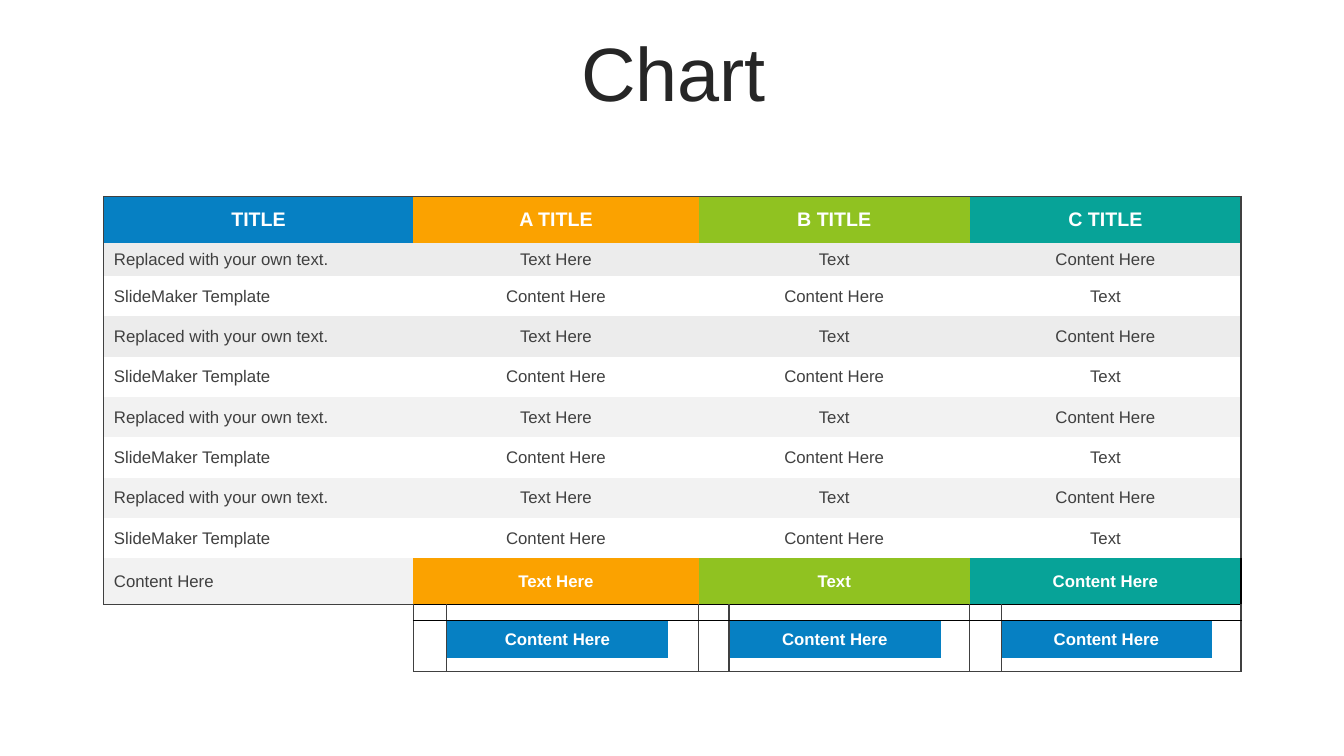
from dataclasses import dataclass

from lxml import etree
from pptx import Presentation
from pptx import util as u
from pptx.dml.color import RGBColor
from pptx.enum import text
from pptx.oxml.ns import qn


@dataclass(frozen=True)
class Theme:
    font: str = "Arial"
    title_size: float = 54
    header_size: float = 14
    body_size: float = 12
    gap_size: float = 1
    title: str = "262626"
    ink: str = "404040"
    rule: str = "000000"
    white: str = "FFFFFF"
    blue: str = "0680C3"
    groups: tuple = ("FBA200", "90C221", "07A398")
    upper_band: str = "ECECEC"
    lower_band: str = "F2F2F2"
    plain_table: str = "{2D5ABB26-0587-4C30-8999-92F81FD0307C}"


HEADER = ("TITLE", "A TITLE", "B TITLE", "C TITLE")
ODD_ROW = ("Replaced with your own text.", "Text Here", "Text", "Content Here")
EVEN_ROW = ("SlideMaker Template", "Content Here", "Content Here", "Text")
SUMMARY = ("Content Here",) + ODD_ROW[1:]
BUTTON = "Content Here"
ROWS = [HEADER] + [ODD_ROW, EVEN_ROW] * 4 + [SUMMARY]
LAST = len(ROWS) - 1
FOOT, BUTTON_ROW, BOTTOM = LAST + 1, LAST + 2, LAST + 3
COLUMN_WIDTHS = (3.07, 0.33, 2.2, 0.3, 0.3, 2.1, 0.29, 0.31, 2.09, 0.29)
ROW_HEIGHTS = (0.46, 0.33) + (0.4,) * 7 + (0.46, 0.16, 0.37, 0.13)


class ChartSlide:
    def __init__(self, presentation, theme):
        self.theme = theme
        self.slide = presentation.slides.add_slide(presentation.slide_layouts[5])

    def add_words(self, frame, words, size, color, bold=False, centred=True):
        paragraph = frame.paragraphs[0]
        paragraph.alignment = text.PP_ALIGN.CENTER if centred else text.PP_ALIGN.LEFT
        run = paragraph.add_run()
        run.text = words
        style = {"name": self.theme.font, "size": u.Pt(size), "bold": bold}
        for name, value in style.items():
            setattr(run.font, name, value)
        run.font.color.rgb = RGBColor.from_string(color)
        return paragraph

    def title(self, words, left, top, width, height):
        heading = self.slide.shapes.title
        box = {"left": left, "top": top, "width": width, "height": height}
        for name, value in box.items():
            setattr(heading, name, u.Inches(value))
        heading.text_frame.vertical_anchor = text.MSO_ANCHOR.MIDDLE
        paragraph = self.add_words(
            heading.text_frame, words, self.theme.title_size, self.theme.title)
        paragraph.line_spacing = 0.9

    def table(self, left, top):
        frame = self.slide.shapes.add_table(
            len(ROW_HEIGHTS), len(COLUMN_WIDTHS), u.Inches(left), u.Inches(top),
            u.Inches(sum(COLUMN_WIDTHS)), u.Inches(sum(ROW_HEIGHTS)))
        grid = frame.table
        grid.first_row = grid.horz_banding = False
        grid._tbl.tblPr.find(qn("a:tableStyleId")).text = self.theme.plain_table
        for column, width in zip(grid.columns, COLUMN_WIDTHS):
            column.width = u.Inches(width)
        for row, height in zip(grid.rows, ROW_HEIGHTS):
            row.height = u.Inches(height)
        return grid

    def cell(self, cell, fill=None, words="", **style):
        cell.vertical_anchor = text.MSO_ANCHOR.MIDDLE
        if fill:
            cell.fill.solid()
            cell.fill.fore_color.rgb = RGBColor.from_string(fill)
        if words:
            self.add_words(cell.text_frame, words, **style)

    def shrink(self, cell):
        """Keep an empty cell from stretching its row."""
        cell.margin_top = cell.margin_bottom = 0
        paragraph = cell.text_frame.paragraphs[0]._p
        etree.SubElement(paragraph, qn("a:endParaRPr"), sz=str(self.theme.gap_size * 100))

    def borders(self, cell, sides):
        """Draw the given sides, a dict of L, R, T, B to colour."""
        properties = cell._tc.get_or_add_tcPr()
        drawn = [side for side in "LRTB" if side in sides]
        for place, side in enumerate(drawn):
            line = etree.Element(qn(f"a:ln{side}"), w=str(u.Pt(1)))
            solid = etree.SubElement(line, qn("a:solidFill"))
            etree.SubElement(solid, qn("a:srgbClr"), val=sides[side])
            properties.insert(place, line)


def row_style(theme, row, group):
    """Fill and text style of one cell in the upper rows; group 0 is the label column."""
    accent = (theme.blue,) + theme.groups
    style = {"size": theme.body_size, "color": theme.ink, "centred": group > 0}
    if row == 0:
        return accent[group], {"size": theme.header_size, "color": theme.white, "bold": True}
    if row == LAST and group:
        return accent[group], {"size": theme.body_size, "color": theme.white, "bold": True}
    if row % 2 == 0:
        return None, style
    return theme.upper_band if row < 5 else theme.lower_band, style


def sides_of(theme, row, column):
    """Outline of the upper block, and of each button box below it."""
    label, step = column == 0, (column - 1) % 3
    if row <= LAST:
        edges = {
            "L": label,
            "R": column == len(COLUMN_WIDTHS) - 1,
            "T": row == 0,
            "B": row == LAST,
        }
    else:
        edges = {
            "L": not label and step == 0,
            "R": label or step == 2,
            "T": row == FOOT,
            "B": not label and row == BOTTOM,
        }
    sides = {side: theme.ink for side, shown in edges.items() if shown}
    if not label:
        black = {LAST: "RB", FOOT: "T"}.get(row, "")
        sides.update({side: theme.rule for side in black if side in sides})
    return sides


def main():
    presentation = Presentation()
    presentation.slide_width = u.Inches(13.33)
    presentation.slide_height = u.Inches(7.5)
    theme = Theme()
    page = ChartSlide(presentation, theme)
    page.title("Chart", 0.35, 0.37, 12.66, 0.79)
    grid = page.table(1.03, 1.95)

    for row, entries in enumerate(ROWS):
        for group, words in enumerate(entries):
            first = max(0, 3 * group - 2)
            if group:
                grid.cell(row, first).merge(grid.cell(row, first + 2))
            fill, style = row_style(theme, row, group)
            page.cell(grid.cell(row, first), fill, words, **style)

    grid.cell(FOOT, 0).merge(grid.cell(BOTTOM, 0))
    button_style = {"size": theme.body_size, "color": theme.white, "bold": True}
    for row in range(FOOT, BOTTOM + 1):
        for column in range(1, len(COLUMN_WIDTHS)):
            if row == BUTTON_ROW and column % 3 == 2:
                page.cell(grid.cell(row, column), theme.blue, BUTTON, **button_style)
            else:
                page.cell(grid.cell(row, column), theme.white)

    for row in range(len(ROW_HEIGHTS)):
        for column in range(len(COLUMN_WIDTHS)):
            cell = grid.cell(row, column)
            sides = sides_of(theme, row, column)
            if cell.is_merge_origin and cell.span_width > 1:
                sides.update(sides_of(theme, row, column + cell.span_width - 1))
            page.borders(cell, sides)
            if not cell.text:
                page.shrink(cell)

    presentation.save("out.pptx")


if __name__ == "__main__":
    main()
